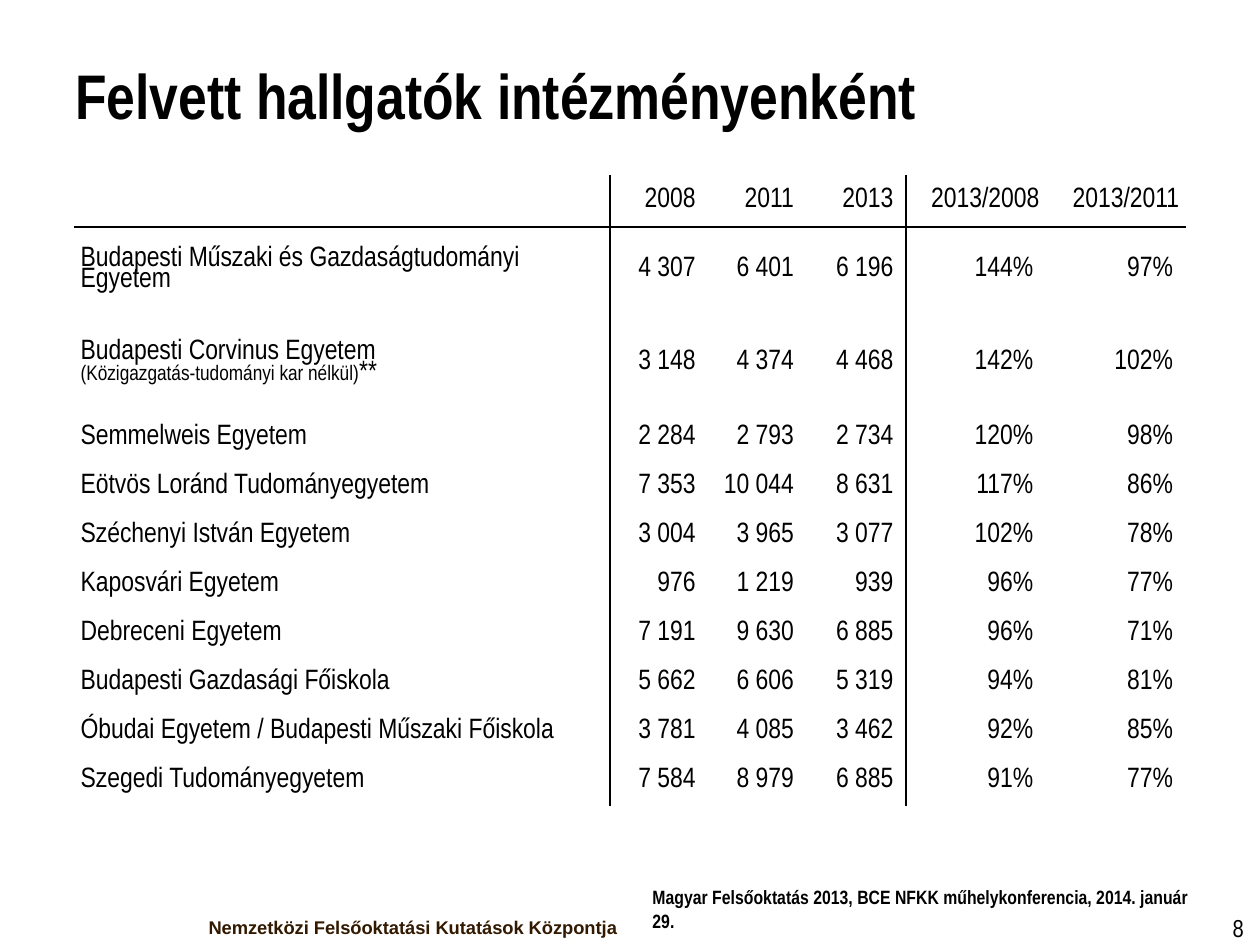
from lxml.etree import SubElement
from pptx import Presentation
from pptx.dml.color import RGBColor
from pptx.enum.text import MSO_ANCHOR as Anchor, PP_ALIGN as Align
from pptx.oxml.ns import qn
from pptx.util import Inches, Pt

BLACK = "000000"
NARROW = "Arial Narrow"
HEADERS = ["", "2008", "2011", "2013", "2013/2008", "2013/2011"]
CORVINUS = "Budapesti Corvinus Egyetem"
ROWS = [
    ["Budapesti Műszaki és Gazdaságtudományi Egyetem", "4 307", "6 401", "6 196", "144%", "97%"],
    [CORVINUS, "3 148", "4 374", "4 468", "142%", "102%"],
    ["Semmelweis Egyetem", "2 284", "2 793", "2 734", "120%", "98%"],
    ["Eötvös Loránd Tudományegyetem", "7 353", "10 044", "8 631", "117%", "86%"],
    ["Széchenyi István Egyetem", "3 004", "3 965", "3 077", "102%", "78%"],
    ["Kaposvári Egyetem", "976", "1 219", "939", "96%", "77%"],
    ["Debreceni Egyetem", "7 191", "9 630", "6 885", "96%", "71%"],
    ["Budapesti Gazdasági Főiskola", "5 662", "6 606", "5 319", "94%", "81%"],
    ["Óbudai Egyetem / Budapesti Műszaki Főiskola", "3 781", "4 085", "3 462", "92%", "85%"],
    ["Szegedi Tudományegyetem", "7 584", "8 979", "6 885", "91%", "77%"],
]
COL_WIDTHS = [4.25, 0.78, 0.78, 0.79, 1.11, 1.11]
ROW_HEIGHTS = [0.41, 0.69, 0.79] + [0.39] * 8


def color(value):
    return RGBColor.from_string(value)


def set_all(target, values):
    for name, value in values.items():
        setattr(target, name, value)


def add_run(p, text, size, font=NARROW, fill=BLACK, bold=False):
    r = p.add_run()
    r.text = text
    set_all(r.font, {"name": font, "size": Pt(size), "bold": bold})
    r.font.color.rgb = color(fill)


def add_text(s, box, text, size, align=Align.LEFT, frame=None, **style):
    tf = s.shapes.add_textbox(*map(Inches, box)).text_frame
    set_all(tf, {"word_wrap": True, **(frame or {})})
    p = tf.paragraphs[0]
    p.alignment = align
    add_run(p, text, size, **style)


def set_borders(cell, sides):
    props = cell._tc.get_or_add_tcPr()
    for side in ("L", "R", "T", "B"):
        shown = side in sides
        line = SubElement(props, qn(f"a:ln{side}"), w=str(Pt(1.5) if shown else 0))
        fill = SubElement(line, qn("a:solidFill" if shown else "a:noFill"))
        if shown:
            SubElement(fill, qn("a:srgbClr"), val=BLACK)


def border_sides(row, col):
    rules = {"L": col in (1, 4), "R": col in (0, 3), "T": row == 1, "B": row == 0}
    return [side for side, shown in rules.items() if shown]


def fill_cell(cell, text, row, col):
    narrow_inset = col == 0 or (row == 0 and col > 3)
    set_all(cell, {
        "vertical_anchor": Anchor.MIDDLE,
        "margin_left": Inches(0.05),
        "margin_right": Inches(0.05 if narrow_inset else 0.1),
        "margin_top": 0,
        "margin_bottom": 0,
    })
    p = cell.text_frame.paragraphs[0]
    set_all(p, {"alignment": Align.RIGHT if col else Align.LEFT, "line_spacing": 0.8})
    add_run(p, text, 16)
    if text == CORVINUS:
        p.add_line_break()
        add_run(p, "(Közigazgatás-tudományi kar nélkül)", 12)
        add_run(p, "**", 16)
    set_borders(cell, border_sides(row, col))
    cell.fill.background()


def add_admissions_table(s, box):
    data = [HEADERS] + ROWS
    table = s.shapes.add_table(len(data), len(HEADERS), *map(Inches, box)).table
    set_all(table, {"first_row": False, "horz_banding": False})
    for column, width in zip(table.columns, COL_WIDTHS):
        column.width = Inches(width)
    for row, height in zip(table.rows, ROW_HEIGHTS):
        row.height = Inches(height)
    for i, values in enumerate(data):
        for j, text in enumerate(values):
            fill_cell(table.cell(i, j), text, i, j)


def add_footer(s, box):
    left, top, width, height = box
    add_text(s, (left, top + 0.24, 3.62, height), "Nemzetközi Felsőoktatási Kutatások Központja",
             10.5, Align.RIGHT, font="Arial", fill="321900", bold=True)
    add_text(s, (left + 3.7, top, 4.65, height),
             "Magyar Felsőoktatás 2013, BCE NFKK műhelykonferencia, 2014. január 29.", 11, bold=True)
    add_text(s, (left + width - 0.64, top + 0.24, 0.64, height), "8", 14, Align.RIGHT,
             {"vertical_anchor": Anchor.MIDDLE})


def main():
    prs = Presentation()
    set_all(prs, {"slide_width": Inches(10), "slide_height": Inches(7.5)})
    s = prs.slides.add_slide(prs.slide_layouts[6])
    add_footer(s, (1.38, 6.98, 8.59, 0.28))
    add_text(s, (0.5, 0.3, 9.07, 0.85), "Felvett hallgatók intézményenként", 36,
             frame={"margin_top": Inches(0.15)}, bold=True)
    add_admissions_table(s, (0.59, 1.39, 8.82, 5.05))
    prs.save("out.pptx")


if __name__ == "__main__":
    main()
